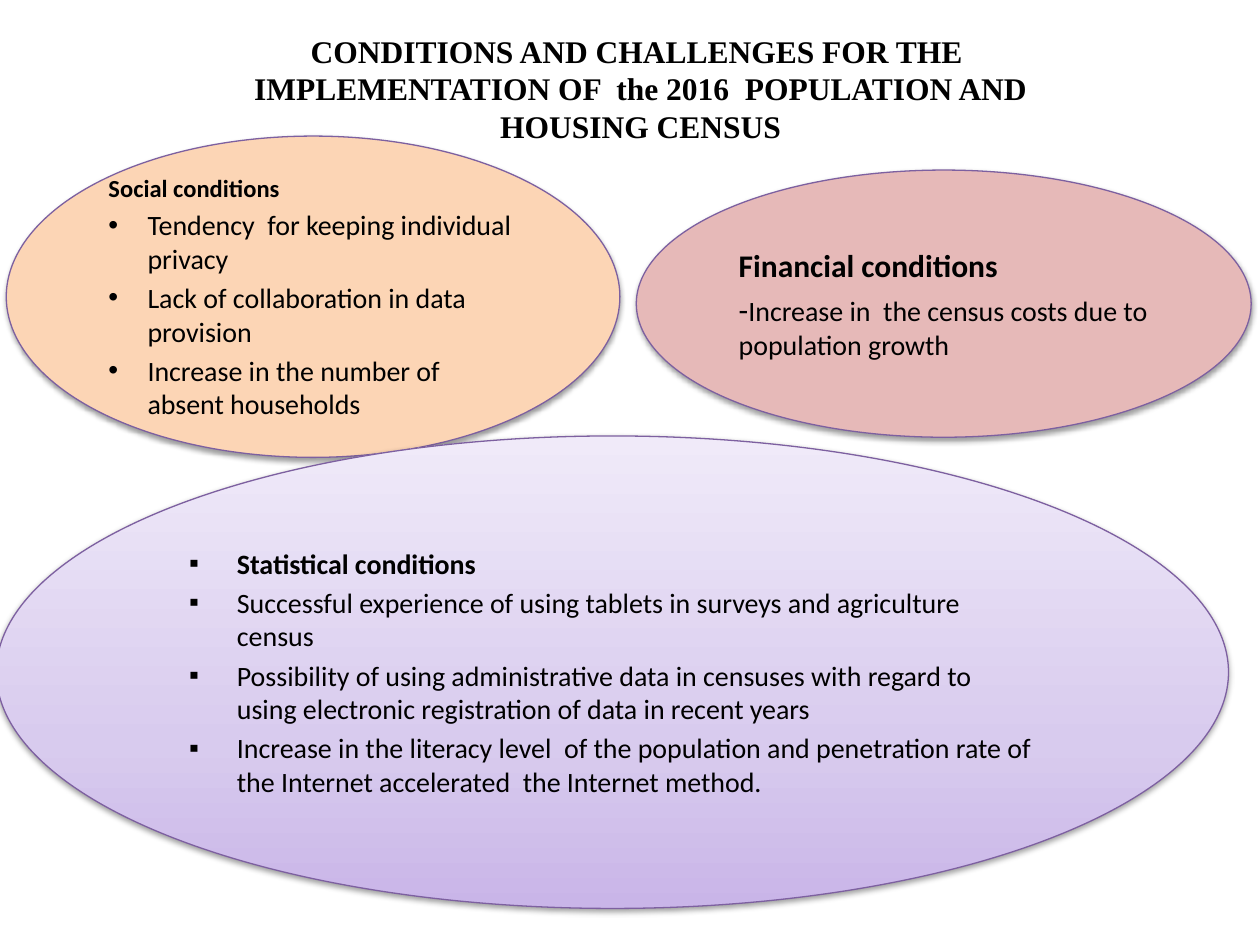
from lxml import etree
from pptx import Presentation
from pptx.dml.color import RGBColor
from pptx.enum.shapes import MSO_SHAPE
from pptx.enum.text import MSO_ANCHOR, MSO_AUTO_SIZE, PP_ALIGN
from pptx.oxml import parse_xml
from pptx.oxml.ns import nsdecls, qn
from pptx.util import Inches, Pt

ELLIPSE = MSO_SHAPE.OVAL
MIDDLE = MSO_ANCHOR.MIDDLE
LEFT, CENTER = PP_ALIGN.LEFT, PP_ALIGN.CENTER

BLACK, OUTLINE = "000000", "7D60A0"
TITLE = ("CONDITIONS AND CHALLENGES FOR THE  IMPLEMENTATION OF  the 2016  "
         "POPULATION AND HOUSING CENSUS")
TITLE_BOX = (1.54, 0.15, 7.09, 1.1)

# Each paragraph is (bulleted, runs); each run is (text, size, bold).
CONDITIONS = [
    {
        "box": (0.05, 1.08, 4.87, 2.55), "fill": "FCD5B5",
        "bullet": "•", "indent": 0.31,
        "paras": [
            (False, [("Social conditions", 14, True)]),
            (True, [("Tendency  for keeping individual privacy", 16, False)]),
            (True, [("Lack of collaboration in data provision", 16, False)]),
            (True, [("Increase in the number of absent households", 16, False)]),
        ],
    },
    {
        "box": (5.05, 1.35, 4.88, 2.12), "fill": "E6B9B8",
        "paras": [
            (False, [("Financial conditions", 18, True)]),
            (False, [("-", 18, False),
                     ("Increase in  the census costs due to population growth", 16, False)]),
        ],
    },
    {
        "box": (-0.03, 3.46, 9.78, 3.75),
        "fill": [(0, "C9B5E8"), (35, "D8CBEE"), (100, "F0EAF9")],
        "bullet": "▪", "indent": 0.38,
        "paras": [
            (True, [("Statistical conditions", 16, True)]),
            (True, [("Successful experience of using tablets in surveys and "
                     "agriculture census", 16, False)]),
            (True, [("Possibility of using administrative data in censuses with regard "
                     "to using electronic registration of data in recent years", 16, False)]),
            (True, [("Increase in the literacy level  of the population and penetration "
                     "rate of the Internet accelerated  the Internet method.", 16, False)]),
        ],
    },
]


def rgb(color):
    return RGBColor.from_string(color)


def add_run(para, text, size, bold, font):
    span = para.add_run()
    span.text = text
    span.font.name = font
    span.font.size = Pt(size)
    span.font.bold = bold
    span.font.color.rgb = rgb(BLACK)


def add_bullet(para, mark, indent):
    """Give the paragraph a hanging bullet."""
    props = para._p.get_or_add_pPr()
    props.set("marL", str(Inches(indent)))
    props.set("indent", str(-Inches(indent)))
    etree.SubElement(props, qn("a:buFont")).set("typeface", "Arial")
    etree.SubElement(props, qn("a:buChar")).set("char", mark)


def fill_shape(shape, fill):
    """Fill with one colour, or with a list of stops rising from the bottom."""
    if isinstance(fill, str):
        shape.fill.solid()
        shape.fill.fore_color.rgb = rgb(fill)
        return
    stops = "".join(f'<a:gs pos="{share * 1000}"><a:srgbClr val="{color}"/></a:gs>'
                    for share, color in fill)
    gradient = parse_xml(f'<a:gradFill {nsdecls("a")} rotWithShape="1"><a:gsLst>{stops}</a:gsLst>'
                         '<a:lin ang="16200000" scaled="0"/></a:gradFill>')
    shape._element.spPr.find(qn("a:prstGeom")).addnext(gradient)


def add_shadow(shape):
    shape.shadow.inherit = False
    effects = shape._element.spPr.find(qn("a:effectLst"))
    effects.append(parse_xml(
        f'<a:outerShdw {nsdecls("a")} blurRad="{Pt(3.1)}" dist="{Pt(1.6)}" dir="5400000" '
        f'rotWithShape="0"><a:srgbClr val="{BLACK}"><a:alpha val="38000"/></a:srgbClr>'
        '</a:outerShdw>'))


def add_title(page):
    title = page.shapes.title
    title.left, title.top, title.width, title.height = map(Inches, TITLE_BOX)
    frame = title.text_frame
    frame.auto_size = MSO_AUTO_SIZE.NONE
    frame.vertical_anchor = MIDDLE
    para = frame.paragraphs[0]
    para.alignment = CENTER
    add_run(para, TITLE, 18, True, "Times New Roman")


def add_condition(page, condition):
    ellipse = page.shapes.add_shape(ELLIPSE, *map(Inches, condition["box"]))
    fill_shape(ellipse, condition["fill"])
    ellipse.line.color.rgb = rgb(OUTLINE)
    ellipse.line.width = Pt(0.75)
    add_shadow(ellipse)
    frame = ellipse.text_frame
    frame.word_wrap = True
    frame.vertical_anchor = MIDDLE
    for index, (bulleted, runs) in enumerate(condition["paras"]):
        para = frame.add_paragraph() if index else frame.paragraphs[0]
        para.alignment = LEFT
        para.space_before = Pt(0.2 * runs[0][1])
        if bulleted:
            add_bullet(para, condition["bullet"], condition["indent"])
        for text, size, bold in runs:
            add_run(para, text, size, bold, "Calibri")


def main():
    deck = Presentation()
    deck.slide_width, deck.slide_height = Inches(10), Inches(7.5)
    page = deck.slides.add_slide(deck.slide_layouts.get_by_name("Title Only"))
    add_title(page)
    for condition in CONDITIONS:
        add_condition(page, condition)
    deck.save("out.pptx")


if __name__ == "__main__":
    main()
